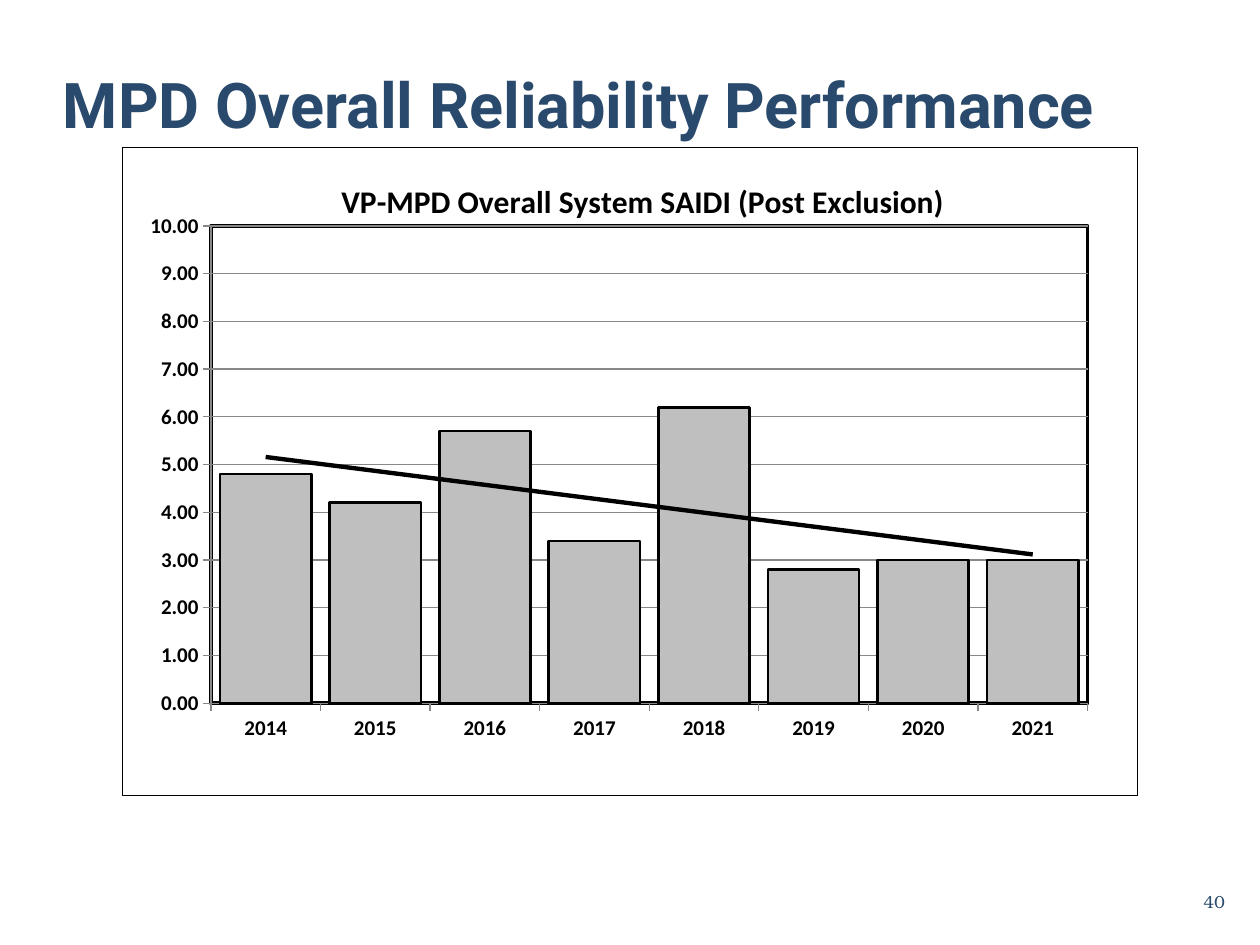
from pptx import Presentation
from pptx.chart.data import CategoryChartData
from pptx.dml.color import RGBColor
from pptx.enum.chart import XL_CHART_TYPE, XL_TICK_MARK
from pptx.enum.text import MSO_ANCHOR, PP_ALIGN
from pptx.oxml import parse_xml
from pptx.oxml.ns import nsdecls, qn
from pptx.util import Pt

COLUMN = XL_CHART_TYPE.COLUMN_CLUSTERED
OUT = XL_TICK_MARK.OUTSIDE
NONE = XL_TICK_MARK.NONE
MIDDLE, BOTTOM = MSO_ANCHOR.MIDDLE, MSO_ANCHOR.BOTTOM
LEFT, RIGHT = PP_ALIGN.LEFT, PP_ALIGN.RIGHT
SCALE = 914400 / 126
NAVY, BLACK, SILVER, GRAY = "294A6C", "000000", "BFBFBF", "888888"


def px(*sizes):
    return [round(size * SCALE) for size in sizes]


def color(code):
    return RGBColor.from_string(code)


def node(tag, body):
    return parse_xml(f"<c:{tag} {nsdecls('c', 'a')}>{body}</c:{tag}>")


def outline(width, code, fill="<a:noFill/>"):
    return node("spPr", f'{fill}<a:ln w="{Pt(width)}"><a:solidFill>'
                f'<a:srgbClr val="{code}"/></a:solidFill></a:ln>')


def layout(inner="", **frame):
    body = inner + '<c:xMode val="edge"/><c:yMode val="edge"/>'
    body += "".join(f'<c:{key} val="{val}"/>' for key, val in frame.items())
    return node("layout", f"<c:manualLayout>{body}</c:manualLayout>")


class Deck:
    def __init__(self, wide, high):
        self.prs = Presentation()
        self.prs.slide_width, self.prs.slide_height = px(wide, high)
        self.slide = self.prs.slides.add_slide(self.prs.slide_layouts[6])

    def style(self, font, face, size, code, bold=False):
        font.name, font.size, font.bold = face, Pt(size), bold
        font.color.rgb = color(code)

    def text(self, box, words, face, size, bold=False, align=LEFT, anchor=MIDDLE, lines=1.0):
        frame = self.slide.shapes.add_textbox(*px(*box)).text_frame
        frame.word_wrap = True
        frame.vertical_anchor = anchor
        frame.margin_left = frame.margin_top = frame.margin_right = frame.margin_bottom = 0
        para = frame.paragraphs[0]
        para.alignment, para.line_spacing = align, lines
        run = para.add_run()
        run.text = words
        self.style(run.font, face, size, NAVY, bold)

    def axis(self, axis):
        axis.major_tick_mark, axis.minor_tick_mark = OUT, NONE
        axis.format.line.color.rgb = color(GRAY)
        axis.format.line.width = Pt(0.75)
        self.style(axis.tick_labels.font, "Calibri", 12, BLACK, True)

    def title(self, chart, words, x, y):
        head = chart.chart_title
        run = head.text_frame.paragraphs[0].add_run()
        run.text = words
        self.style(run.font, "Calibri", 18, BLACK, True)
        root = chart._chartSpace.find(".//" + qn("c:title"))
        for tag in ("c:layout", "c:overlay"):
            for old in root.findall(qn(tag)):
                root.remove(old)
        text = root.find(qn("c:tx"))
        text.addnext(layout(x=x, y=y))
        text.getnext().addnext(parse_xml(f'<c:overlay {nsdecls("c")} val="1"/>'))

    def bars(self, box, cats, vals, words):
        data = CategoryChartData(number_format="0.00")
        data.categories = cats
        data.add_series("Series 1", vals)
        chart = self.slide.shapes.add_chart(COLUMN, *px(*box), data).chart
        self.style(chart.font, "Calibri", 10, BLACK)
        chart.has_legend = False
        self.title(chart, words, 0.21, 0.04)

        self.axis(chart.category_axis)
        scale = chart.value_axis
        self.axis(scale)
        scale.minimum_scale, scale.maximum_scale, scale.major_unit = 0, 10, 1
        scale.tick_labels.number_format = "0.00"
        scale.tick_labels.number_format_is_linked = False
        grid = scale.major_gridlines.format.line
        grid.color.rgb, grid.width = color(GRAY), Pt(0.75)

        plot = chart.plots[0]
        plot.gap_width, plot.vary_by_categories = 20, False
        series = plot.series[0]
        series.format.fill.solid()
        series.format.fill.fore_color.rgb = color(SILVER)
        series.format.line.color.rgb = color(BLACK)
        series.format.line.width = Pt(1.5)
        trend = node("trendline", '<c:trendlineType val="linear"/>'
                     '<c:dispRSqr val="0"/><c:dispEq val="0"/>')
        trend.insert(0, outline(2.5, BLACK))
        series._element.find(qn("c:cat")).addprevious(trend)

        root = chart._chartSpace
        area = root.find(".//" + qn("c:plotArea"))
        for old in area.findall(qn("c:layout")):
            area.remove(old)
        area.insert(0, layout('<c:layoutTarget val="inner"/>', x=0.087, y=0.121, w=0.864, h=0.737))
        area.append(outline(2.25, BLACK))
        white = '<a:solidFill><a:srgbClr val="FFFFFF"/></a:solidFill>'
        root.find(qn("c:txPr")).addprevious(outline(0.75, BLACK, white))


def main():
    deck = Deck(1260, 945)
    deck.text((941, 874, 284, 38), "40", "TeX Gyre Bonum", 10, align=RIGHT, anchor=BOTTOM)
    deck.text((63, 64, 1134, 88), "MPD Overall Reliability Performance", "Roboto", 36,
              bold=True, lines=0.9)
    deck.bars((122, 147, 1016, 649), [str(year) for year in range(2014, 2022)],
              (4.8, 4.2, 5.7, 3.4, 6.2, 2.8, 3, 3),
              "VP-MPD Overall System SAIDI (Post Exclusion)")
    deck.prs.save("out.pptx")


if __name__ == "__main__":
    main()
